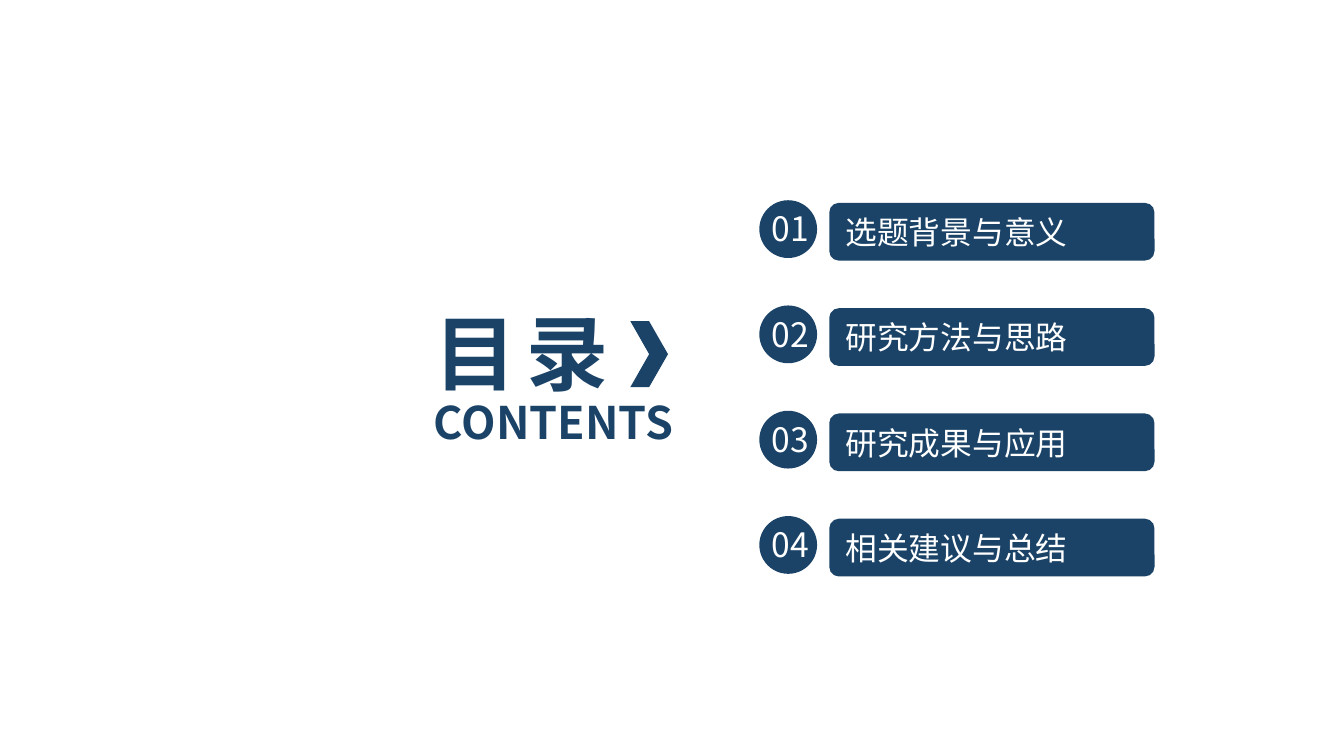
"""Build a contents slide with a heading and four numbered sections."""
from pptx import Presentation
from pptx.dml.color import RGBColor
from pptx.enum.shapes import MSO_SHAPE
from pptx.enum.text import MSO_ANCHOR, MSO_AUTO_SIZE, PP_ALIGN
from pptx.oxml.ns import qn
from pptx.util import Inches, Pt
from lxml.etree import SubElement

COLORS = {"navy": "1B4367", "white": "FFFFFF"}
FONT = "Noto Sans CJK SC"
SECTIONS = ["选题背景与意义", "研究方法与思路", "研究成果与应用", "相关建议与总结"]
FIRST_TOP, LAST_TOP = 1.51, 3.86
PITCH = (LAST_TOP - FIRST_TOP) / (len(SECTIONS) - 1)


def write(box, text, size, color, align=PP_ALIGN.LEFT, bold=False):
    frame = box.text_frame
    frame.auto_size = MSO_AUTO_SIZE.NONE
    frame.word_wrap = True
    frame.vertical_anchor = MSO_ANCHOR.MIDDLE
    paragraph = frame.paragraphs[0]
    paragraph.text = text
    paragraph.alignment = align
    font = paragraph.font
    font.name, font.size, font.bold = FONT, Pt(size), bold
    font.color.rgb = RGBColor.from_string(COLORS[color])
    properties = paragraph._p.pPr.find(qn("a:defRPr"))
    SubElement(properties, qn("a:ea")).set("typeface", FONT)
    return properties


def add_navy(shapes, preset, left, top, width, height):
    shape = shapes.add_shape(preset, Inches(left), Inches(top), Inches(width), Inches(height))
    shape.shadow.inherit = False
    shape.fill.solid()
    shape.fill.fore_color.rgb = RGBColor.from_string(COLORS["navy"])
    shape.line.fill.background()
    return shape


prs = Presentation()
prs.slide_width, prs.slide_height = Inches(10), Inches(10 * 9 / 16)
slide = prs.slides.add_slide(prs.slide_layouts[5])

heading = slide.shapes.title
heading.left, heading.top = Inches(3.13), Inches(2.2)
heading.width, heading.height = Inches(2.35), Inches(0.84)
write(heading, "目 录", 44, "navy", bold=True).set("spc", "-220")

subheading = slide.shapes.add_textbox(Inches(3.13), Inches(2.89), Inches(2.31), Inches(0.5))
write(subheading, "CONTENTS", 24, "navy", bold=True)
add_navy(slide.shapes, MSO_SHAPE.CHEVRON, 4.69, 2.39, 0.28, 0.49)

for index, section in enumerate(SECTIONS):
    top = FIRST_TOP + index * PITCH
    bar = add_navy(slide.shapes, MSO_SHAPE.ROUNDED_RECTANGLE, 6.17, top, 2.42, 0.43)
    write(bar, section, 17, "white")

    badge = slide.shapes.add_group_shape()
    add_navy(badge.shapes, MSO_SHAPE.OVAL, 5.65, top - 0.02, 0.43, 0.43)
    number = badge.shapes.add_textbox(Inches(5.62), Inches(top - 0.01), Inches(0.52), Inches(0.4))
    write(number, f"{index + 1:02d}", 18, "white", PP_ALIGN.CENTER)

prs.save("out.pptx")
